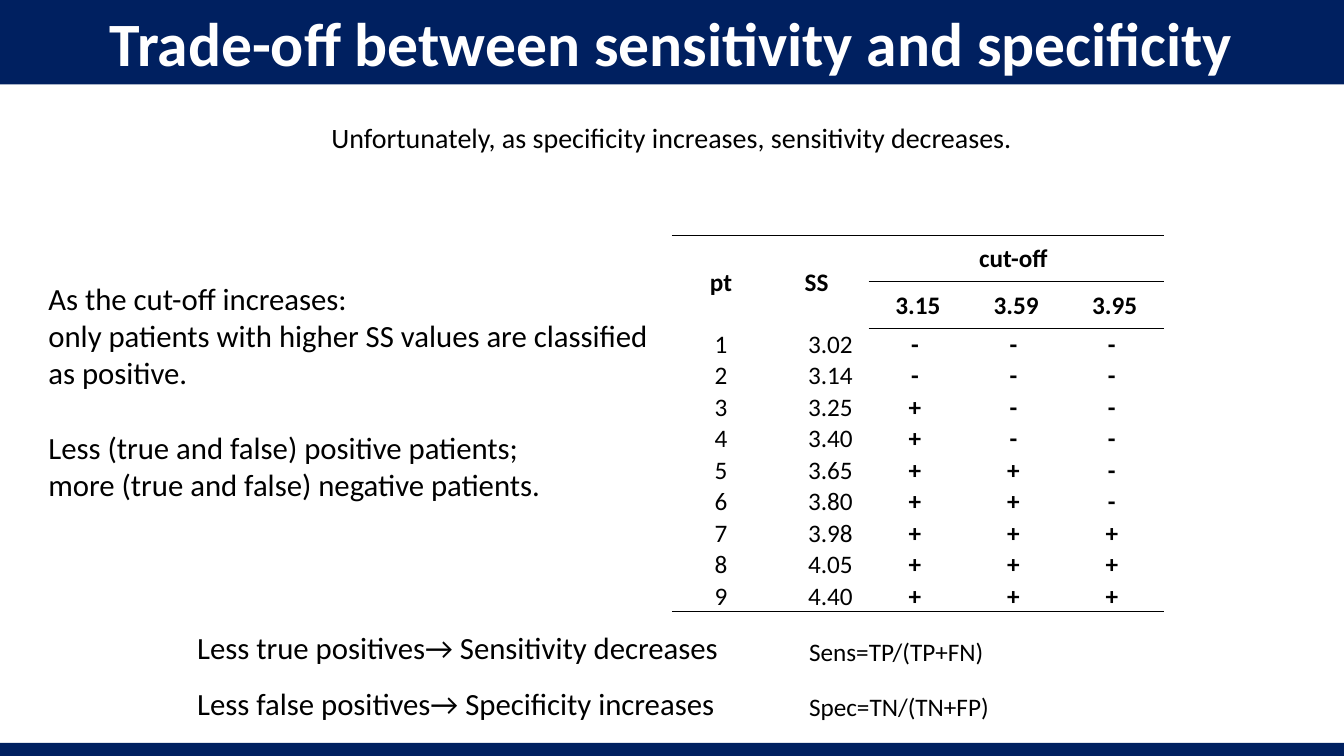
from lxml.etree import SubElement
from pptx import Presentation
from pptx.dml.color import RGBColor
from pptx.enum.shapes import MSO_SHAPE
from pptx.enum.text import MSO_ANCHOR, MSO_AUTO_SIZE, PP_ALIGN
from pptx.oxml import parse_xml
from pptx.oxml.ns import nsdecls, qn
from pptx.util import Cm, Pt

NAVY = RGBColor(0x00, 0x20, 0x60)
BLACK = RGBColor(0x00, 0x00, 0x00)
WHITE = RGBColor(0xFF, 0xFF, 0xFF)
FONT = "Calibri"
NO_GRID_STYLE = "{2D5ABB26-0587-4C30-8999-92F81FD0307C}"

SS_VALUES = [3.02, 3.14, 3.25, 3.40, 3.65, 3.80, 3.98, 4.05, 4.40]
CUT_OFFS = [3.15, 3.59, 3.95]
CLASSIFICATION = [
    "As the cut-off increases:",
    "only patients with higher SS values are classified as positive.",
    "Less (true and false) positive patients;",
    "more (true and false) negative patients.",
]


def style(p, size, color=BLACK, bold=False, align=None):
    p.font.name = FONT
    p.font.size = Pt(size)
    p.font.bold = bold
    p.font.color.rgb = color
    p.alignment = align


def add_text(slide, left, top, width, height, lines, size, wrap=False):
    box = slide.shapes.add_textbox(Cm(left), Cm(top), Cm(width), Cm(height))
    tf = box.text_frame
    tf.word_wrap = wrap
    tf.text = "\n".join(lines)
    for p in tf.paragraphs:
        style(p, size)
    return tf


def set_title(slide, text):
    sp = slide.shapes.title
    sp.left, sp.top, sp.width, sp.height = Cm(0), Cm(0), Cm(33.87), Cm(2.13)
    sp.fill.solid()
    sp.fill.fore_color.rgb = NAVY
    tf = sp.text_frame
    tf.text = text
    tf.auto_size = MSO_AUTO_SIZE.NONE
    tf.vertical_anchor = MSO_ANCHOR.MIDDLE
    style(tf.paragraphs[0], 44, WHITE, True, PP_ALIGN.CENTER)


def add_footer_bar(slide):
    sp = slide.shapes.add_shape(
        MSO_SHAPE.RECTANGLE, Cm(0), Cm(18.72), Cm(33.87), Cm(0.33))
    sp.shadow.inherit = False
    sp.fill.solid()
    sp.fill.fore_color.rgb = NAVY
    sp.line.fill.background()


def set_border(cell, side):
    ln = parse_xml(f'<a:{side} {nsdecls("a")} w="12700"/>')
    fill = SubElement(ln, qn("a:solidFill"))
    SubElement(fill, qn("a:srgbClr"), val=str(BLACK))
    cell._tc.get_or_add_tcPr().insert(0, ln)


def fill_cell(cell, text, bold=True, align=PP_ALIGN.CENTER, right=0.03):
    cell.margin_left = cell.margin_top = Cm(0.03)
    cell.margin_right, cell.margin_bottom = Cm(right), Cm(0)
    cell.fill.background()
    cell.text = text
    style(cell.text_frame.paragraphs[0], 18, bold=bold, align=align)


def add_cut_off_table(slide):
    n_rows, n_cols = len(SS_VALUES) + 2, len(CUT_OFFS) + 2
    frame = slide.shapes.add_table(
        n_rows, n_cols, Cm(16.93), Cm(5.93), Cm(12.4), Cm(9.36))
    table = frame.table
    table.first_row = table.horz_banding = False
    table._tbl.tblPr.find(qn("a:tableStyleId")).text = NO_GRID_STYLE
    for column in table.columns:
        column.width = Cm(2.48)
    for i, row in enumerate(table.rows):
        row.height = Cm(1.17 if i < 2 else 0.78)

    headers = [["pt", "SS ", "cut-off ", "", ""],
               ["", ""] + [f"{c:.2f}" for c in CUT_OFFS]]
    for r, labels in enumerate(headers):
        for c, label in enumerate(labels):
            fill_cell(table.cell(r, c), label)
            table.cell(r, c).vertical_anchor = MSO_ANCHOR.MIDDLE
    for r, ss in enumerate(SS_VALUES, 2):
        fill_cell(table.cell(r, 0), str(r - 1), bold=False)
        fill_cell(table.cell(r, 1), f"{ss:.2f}", False, PP_ALIGN.RIGHT, 0.4)
        for c, cut_off in enumerate(CUT_OFFS, 2):
            fill_cell(table.cell(r, c), "+ " if ss >= cut_off else "- ")

    for c in range(n_cols):
        if c >= 2:
            set_border(table.cell(0, c), "lnB")
            set_border(table.cell(1, c), "lnT")
        set_border(table.cell(0, c), "lnT")
        set_border(table.cell(n_rows - 1, c), "lnB")
    for c in range(2):
        table.cell(0, c).merge(table.cell(1, c))
    table.cell(0, 2).merge(table.cell(0, n_cols - 1))


def main():
    prs = Presentation()
    prs.slide_width, prs.slide_height = Cm(33.87), Cm(19.05)
    slide = prs.slides.add_slide(prs.slide_layouts[5])
    set_title(slide, "Trade-off between sensitivity and specificity")
    add_text(slide, 8.1, 2.92, 18.01, 1.12,
             ["Unfortunately, as specificity increases, sensitivity decreases."], 20)
    tf = add_text(slide, 0.97, 6.93, 15.98, 5.89, CLASSIFICATION, 22, wrap=True)
    tf.paragraphs[2].space_before = Pt(26.8)
    add_cut_off_table(slide)
    effects = [("Less true positives→ Sensitivity decreases", "Sens=TP/(TP+FN)"),
               ("Less false positives→ Specificity increases", "Spec=TN/(TN+FP)")]
    for i, (effect, formula) in enumerate(effects):
        top = 15.72 + 1.4 * i
        add_text(slide, 4.72, top, 13.87, 1.19, [effect], 22)
        add_text(slide, 20.14, top + 0.18, 5.13, 1.02, [formula], 18)
    add_footer_bar(slide)
    prs.save("out.pptx")


if __name__ == "__main__":
    main()
